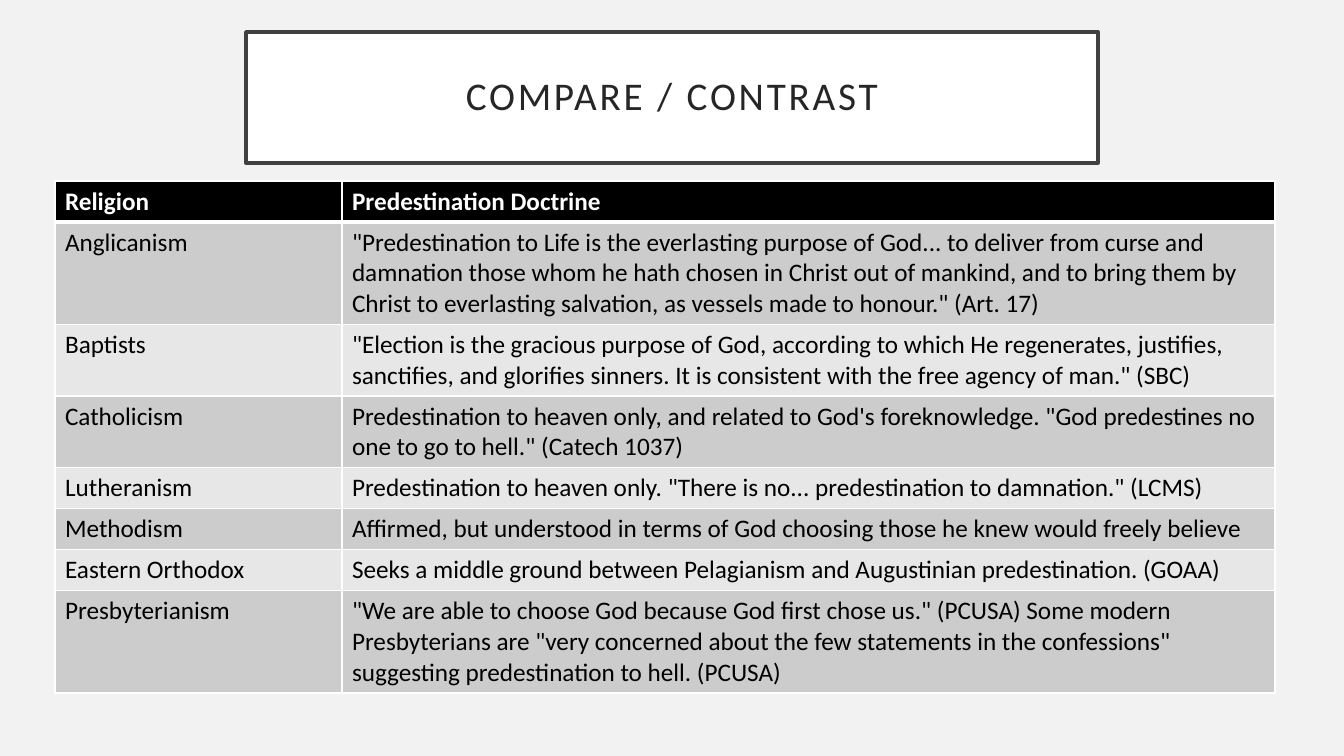
from dataclasses import dataclass

from lxml import etree
from pptx import Presentation
from pptx import util as u
from pptx.dml.color import RGBColor
from pptx.enum import shapes, text
from pptx.oxml.ns import qn


@dataclass(frozen=True)
class Theme:
    font: str = "Calibri"
    title_size: int = 28
    table_size: int = 18
    background: str = "F2F2F2"
    white: str = "FFFFFF"
    black: str = "000000"
    frame: str = "404040"
    title: str = "262626"
    bands: tuple = ("CCCCCC", "E7E7E7")


T = Theme()
PX = u.Inches(1) / 100.8
COLUMNS = (287, 933)
ROW_HEIGHT = 41
ROWS = [
    ("Religion", "Predestination Doctrine"),
    ("Anglicanism",
     '"Predestination to Life is the everlasting purpose of God... to deliver from curse and '
     "damnation those whom he hath chosen in Christ out of mankind, and to bring them by "
     'Christ to everlasting salvation, as vessels made to honour." (Art. 17)'),
    ("Baptists",
     '"Election is the gracious purpose of God, according to which He regenerates, justifies, '
     'sanctifies, and glorifies sinners. It is consistent with the free agency of man." (SBC)'),
    ("Catholicism",
     "Predestination to heaven only, and related to God's foreknowledge. "
     '"God predestines no one to go to hell." (Catech 1037)'),
    ("Lutheranism",
     'Predestination to heaven only. "There is no... predestination to damnation." (LCMS)'),
    ("Methodism",
     "Affirmed, but understood in terms of God choosing those he knew would freely believe"),
    ("Eastern Orthodox",
     "Seeks a middle ground between Pelagianism and Augustinian predestination. (GOAA)"),
    ("Presbyterianism",
     '"We are able to choose God because God first chose us." (PCUSA) Some modern '
     'Presbyterians are "very concerned about the few statements in the confessions" '
     "suggesting predestination to hell. (PCUSA)"),
]


def px(*lengths):
    return [u.Emu(round(n * PX)) for n in lengths]


def style_run(r, size, color, bold=False):
    r.font.name = T.font
    r.font.size = u.Pt(size)
    r.font.bold = bold
    r.font.color.rgb = RGBColor.from_string(color)


prs = Presentation()
prs.slide_width, prs.slide_height = px(1344, 756)
s = prs.slides.add_slide(prs.slide_layouts[6])
s.background.fill.solid()
s.background.fill.fore_color.rgb = RGBColor.from_string(T.background)

# Title box
sp = s.shapes.add_shape(shapes.MSO_SHAPE.RECTANGLE, *px(246, 32, 852, 131))
sp.shadow.inherit = False
sp.fill.solid()
sp.fill.fore_color.rgb = RGBColor.from_string(T.white)
sp.line.color.rgb = RGBColor.from_string(T.frame)
sp.line.width = u.Pt(2.5)
tf = sp.text_frame
tf.word_wrap = True
tf.vertical_anchor = text.MSO_ANCHOR.MIDDLE
tf.margin_left, tf.margin_top, tf.margin_right, tf.margin_bottom = px(20, 20, 20, 20)
p = tf.paragraphs[0]
p.text = "COMPARE / CONTRAST"
p.alignment = text.PP_ALIGN.CENTER
p.line_spacing = 0.9
r = p.runs[0]
style_run(r, T.title_size, T.title)
r._r.get_or_add_rPr().set("spc", "200")

# Doctrine table
table = s.shapes.add_table(
    len(ROWS), len(COLUMNS),
    *px(55, 181, sum(COLUMNS), ROW_HEIGHT * len(ROWS))).table
for column, width in zip(table.columns, px(*COLUMNS)):
    column.width = width

for i, row in enumerate(ROWS):
    table.rows[i].height = px(ROW_HEIGHT)[0]
    header = i == 0
    for j, wording in enumerate(row):
        cell = table.cell(i, j)
        cell.text_frame.text = wording
        style_run(cell.text_frame.paragraphs[0].runs[0], T.table_size,
                  T.white if header else T.black, header)
        tcPr = cell._tc.get_or_add_tcPr()
        for side in "LRTB":
            thick = (i, side) in ((0, "B"), (1, "T"))
            ln = etree.SubElement(tcPr, qn(f"a:ln{side}"), w=str(u.Pt(3 if thick else 1)))
            fill = etree.SubElement(ln, qn("a:solidFill"))
            etree.SubElement(fill, qn("a:srgbClr"), val=T.white)
        cell.fill.solid()
        cell.fill.fore_color.rgb = RGBColor.from_string(
            T.black if header else T.bands[(i - 1) % 2])

prs.save("out.pptx")
